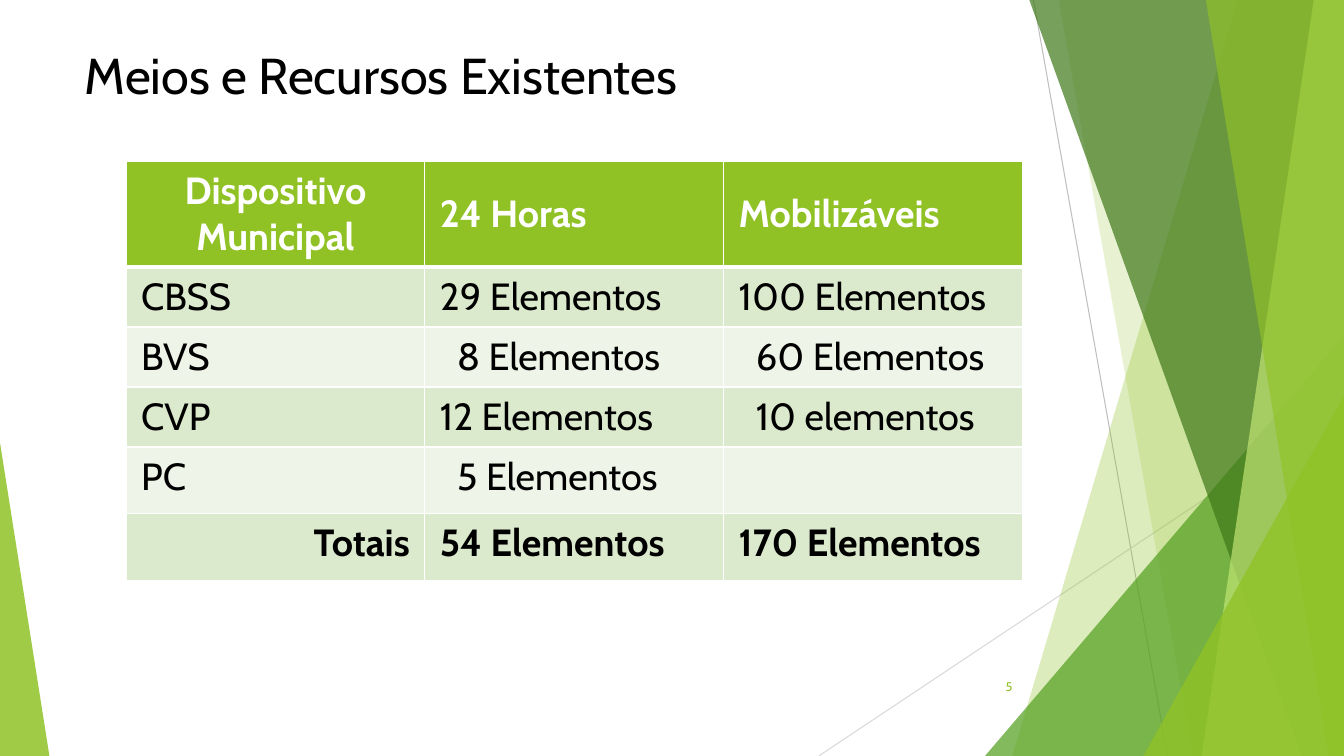
from dataclasses import dataclass

from lxml.etree import SubElement
from pptx import Presentation
from pptx.dml.color import RGBColor
from pptx.enum.shapes import MSO_CONNECTOR as Connector
from pptx.enum.shapes import MSO_SHAPE as Preset
from pptx.enum.text import MSO_ANCHOR as Anchor
from pptx.enum.text import PP_ALIGN as Align
from pptx.oxml import parse_xml
from pptx.oxml.ns import nsdecls, qn
from pptx.slide import Slide
from pptx.util import Inches, Pt

# The grid has 100 columns and 100 rows over the whole slide.
SLIDE_WIDTH, SLIDE_HEIGHT = Inches(13.33), Inches(7.5)
FONT = "Cabin"
GREEN, WHITE, BLACK = "90C226", "FFFFFF", "000000"
BANDS = ("DBE9CD", "EEF4E8")

TABLE_LEFT, TABLE_TOP, COLUMN_WIDTH = 9.38, 21.33, 22.23
ROW_HEIGHTS = (12.4, 7.73, 7.73, 7.73, 8.8, 8.93)
SIDE_MARGIN, END_MARGIN, DIGIT_INDENT = Inches(0.15), Inches(0.07), Inches(0.17)


@dataclass(frozen=True)
class Ray:
    start: tuple[float, float]
    end: tuple[float, float]
    color: str


@dataclass(frozen=True)
class Shard:
    """A full-height facet reaching from a slanted left edge to the slide's right edge."""
    top_column: float
    bottom_column: float
    color: str
    opacity: int


@dataclass(frozen=True)
class Corner:
    """A right triangle standing on the slide's bottom edge."""
    left: float
    top: float
    width: float
    apex: float
    color: str
    opacity: int


@dataclass(frozen=True)
class Entry:
    text: str
    indented: bool = False


RAYS = (
    Ray((76.9, 0), (86.87, 100), "BFBFBF"),
    Ray((100, 53.73), (60.92, 100), "D9D9D9"),
)
FACETS = (
    Shard(92.1, 75.32, GREEN, 30),
    Shard(78.77, 88.75, GREEN, 20),
    Corner(73.29, 44.4, 26.71, 1, "54A021", 72),
    Shard(76.59, 96.85, "3F7819", 70),
    Shard(97.75, 89.42, "C0E474", 70),
    Shard(89.72, 98.87, GREEN, 65),
    Corner(85.07, 52.4, 14.93, 1, GREEN, 80),
    Corner(0, 58.53, 3.68, 0, GREEN, 85),
)
ENTRIES = (
    (Entry("Dispositivo Municipal"), Entry("24 Horas"), Entry("Mobilizáveis")),
    (Entry("CBSS"), Entry("29 Elementos"), Entry("100 Elementos")),
    (Entry("BVS"), Entry("8 Elementos", True), Entry("60 Elementos", True)),
    (Entry("CVP"), Entry("12 Elementos"), Entry("10 elementos", True)),
    (Entry("PC"), Entry("5 Elementos", True), Entry("")),
    (Entry("Totais"), Entry("54 Elementos"), Entry("170 Elementos")),
)


def across(columns: float) -> int:
    return round(SLIDE_WIDTH * columns / 100)


def down(rows: float) -> int:
    return round(SLIDE_HEIGHT * rows / 100)


def rgb(color: str) -> RGBColor:
    return RGBColor.from_string(color)


def format_text(paragraph, size: float, color: str, align: Align, bold: bool = False) -> None:
    paragraph.alignment = align
    font = paragraph.font
    font.name, font.size, font.bold = FONT, Pt(size), bold
    font.color.rgb = rgb(color)


def draw_ray(slide: Slide, ray: Ray) -> None:
    (start_x, start_y), (end_x, end_y) = ray.start, ray.end
    connector = slide.shapes.add_connector(
        Connector.STRAIGHT, across(start_x), down(start_y), across(end_x), down(end_y))
    connector.line.color.rgb = rgb(ray.color)
    connector.line.width = Pt(0.75)
    SubElement(connector.element.spPr, qn("a:effectLst"))


def draw_facet(slide: Slide, facet: Shard | Corner) -> None:
    if isinstance(facet, Shard):
        builder = slide.shapes.build_freeform(across(facet.top_column), 0)
        corners = ((100, 0), (100, 100), (facet.bottom_column, 100))
        builder.add_line_segments([(across(x), down(y)) for x, y in corners])
        shape = builder.convert_to_shape()
    else:
        shape = slide.shapes.add_shape(
            Preset.ISOSCELES_TRIANGLE, across(facet.left), down(facet.top),
            across(facet.width), down(100 - facet.top))
        shape.adjustments[0] = facet.apex
    shape.shadow.inherit = False
    shape.line.fill.background()
    shape.fill.solid()
    shape.fill.fore_color.rgb = rgb(facet.color)
    color_element = shape.element.xpath("./p:spPr/a:solidFill/a:srgbClr")[0]
    SubElement(color_element, qn("a:alpha"), val=str(facet.opacity * 1000))


def add_borders(cell_element, row: int) -> None:
    """Draw white cell edges, thicker where the header meets the body."""
    widths = {"L": 1, "R": 1, "T": 3 if row == 1 else 1, "B": 3 if row == 0 else 1}
    properties = cell_element.get_or_add_tcPr()
    for position, (side, width) in enumerate(widths.items()):
        properties.insert(position, parse_xml(
            f'<a:ln{side} {nsdecls("a")} w="{Pt(width)}"><a:solidFill>'
            f'<a:srgbClr val="{WHITE}"/></a:solidFill></a:ln{side}>'))


def draw_table(slide: Slide) -> None:
    row_count, column_count = len(ENTRIES), len(ENTRIES[0])
    frame = slide.shapes.add_table(
        row_count, column_count, across(TABLE_LEFT), down(TABLE_TOP),
        across(COLUMN_WIDTH * column_count), down(sum(ROW_HEIGHTS)))
    table = frame.table
    for table_row, height in zip(table.rows, ROW_HEIGHTS):
        table_row.height = down(height)

    cell_elements = frame.element.xpath(".//a:tc")
    for index, (cell, cell_element) in enumerate(zip(table.iter_cells(), cell_elements)):
        row, column = divmod(index, column_count)
        entry = ENTRIES[row][column]
        is_header, is_total = row == 0, row == row_count - 1
        align = Align.LEFT
        if column == 0 and is_header:
            align = Align.CENTER
        elif column == 0 and is_total:
            align = Align.RIGHT
        cell.text = entry.text
        cell.margin_left = SIDE_MARGIN + (DIGIT_INDENT if entry.indented else 0)
        cell.margin_right = SIDE_MARGIN
        cell.margin_top = cell.margin_bottom = END_MARGIN
        cell.vertical_anchor = Anchor.MIDDLE if is_header else Anchor.TOP
        cell.fill.solid()
        cell.fill.fore_color.rgb = rgb(GREEN if is_header else BANDS[(row - 1) % 2])
        format_text(cell.text_frame.paragraphs[0], 27, WHITE if is_header else BLACK,
                    align, is_header or is_total)
        add_borders(cell_element, row)


def draw_title(slide: Slide) -> None:
    title = slide.shapes.title
    title.left, title.top = across(5.55), down(5.2)
    title.width, title.height = across(70.52), down(10.8)
    title.text_frame.text = "Meios e Recursos Existentes"
    title.text_frame.vertical_anchor = Anchor.TOP
    format_text(title.text_frame.paragraphs[0], 36, BLACK, Align.LEFT)


def draw_page_number(slide: Slide) -> None:
    box = slide.shapes.add_textbox(across(70.44), down(88.13), across(5.63), down(5.33))
    box.text_frame.word_wrap = True
    box.text_frame.vertical_anchor = Anchor.MIDDLE
    box.text_frame.text = "5"
    format_text(box.text_frame.paragraphs[0], 9, GREEN, Align.RIGHT)


def main() -> None:
    presentation = Presentation()
    presentation.slide_width, presentation.slide_height = SLIDE_WIDTH, SLIDE_HEIGHT
    slide = presentation.slides.add_slide(presentation.slide_layouts[5])
    for ray in RAYS:
        draw_ray(slide, ray)
    for facet in FACETS:
        draw_facet(slide, facet)
    draw_title(slide)
    draw_table(slide)
    draw_page_number(slide)
    presentation.save("out.pptx")


if __name__ == "__main__":
    main()
